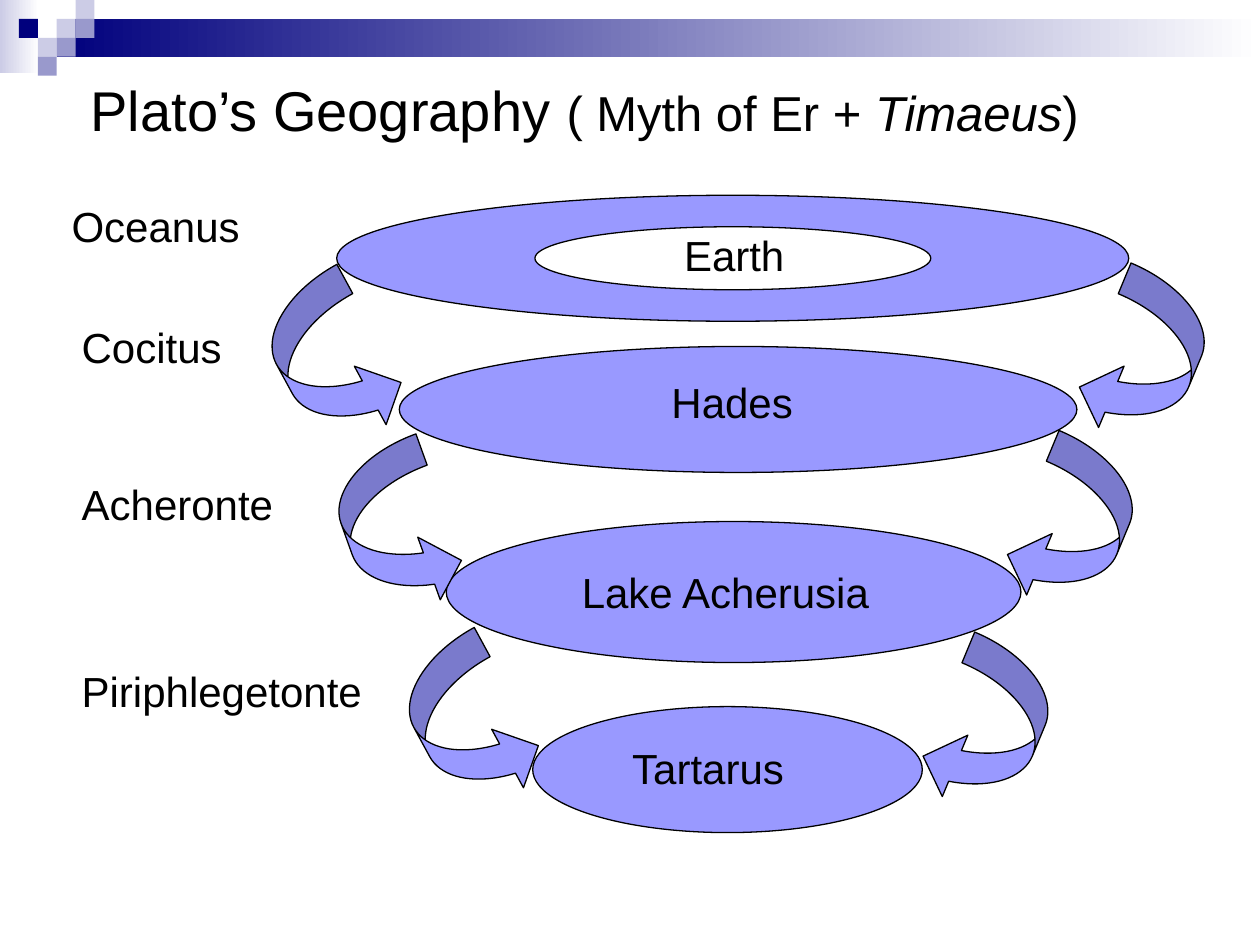
from dataclasses import dataclass

from pptx import Presentation
from pptx.dml.color import RGBColor
from pptx.enum.shapes import MSO_SHAPE as Preset
from pptx.enum.text import MSO_ANCHOR as Anchor, PP_ALIGN as Align
from pptx.util import Pt

COLORS = {
    "navy": "00007D",
    "mist": "CCCCE6",
    "lavender": "9999CC",
    "water": "9999FF",
    "land": "FFFFFF",
    "ink": "000000",
}
FONT = "Arial"
TILE = 10.8
LABEL_HEIGHT = 36
ARROW_WIDTH, ARROW_HEIGHT = 57.6, 95.8
ARROW_ADJUSTMENTS = (0.33, 0.66, 0.33)


@dataclass(frozen=True)
class Box:
    left: float
    top: float
    width: float
    height: float

    def lengths(self):
        return tuple(Pt(v) for v in (self.left, self.top, self.width, self.height))


@dataclass(frozen=True)
class Region:
    box: Box
    color: str = "water"


@dataclass(frozen=True)
class Label:
    text: str
    left: float
    top: float
    width: float


@dataclass(frozen=True)
class Stream:
    left: float
    top: float
    rotation: float
    preset: Preset


@dataclass(frozen=True)
class Tile:
    column: int
    row: int
    color: str


BANDS = (
    (Box(0, 0, 22.3, 41.8), "mist"),
    (Box(32.4, TILE, 687.6, 21.6), "navy"),
)
TILES = (
    Tile(3, 1, "mist"),
    Tile(4, 0, "mist"),
    Tile(4, 1, "lavender"),
    Tile(2, 2, "mist"),
    Tile(1, 1, "navy"),
    Tile(3, 2, "lavender"),
    Tile(2, 3, "lavender"),
)
REGIONS = (
    Region(Box(192.4, 111.6, 452.6, 72)),
    Region(Box(305.7, 129.6, 226.2, 36), "land"),
    Region(Box(228.2, 198, 387.2, 72)),
    Region(Box(255, 298, 328.4, 80.6)),
    Region(Box(304.4, 403.8, 222.6, 72)),
)
STREAMS = (
    Stream(161.3, 159, 331.5, Preset.CURVED_RIGHT_ARROW),
    Stream(198, 254.9, 340.2, Preset.CURVED_RIGHT_ARROW),
    Stream(239.8, 366.5, 331.5, Preset.CURVED_RIGHT_ARROW),
    Stream(625.7, 157.7, 22.6, Preset.CURVED_LEFT_ARROW),
    Stream(584.6, 253.4, 22.6, Preset.CURVED_LEFT_ARROW),
    Stream(536.4, 368.6, 22.6, Preset.CURVED_LEFT_ARROW),
)
LABELS = (
    Label("Earth", 383.8, 127.4, 72),
    Label("Hades", 376.6, 211.7, 84.2),
    Label("Lake Acherusia", 325.4, 320.4, 182.9),
    Label("Tartarus", 354.2, 420.5, 110.9),
    Label("Oceanus", 33.8, 110.9, 135.4),
    Label("Cocitus", 39.6, 180, 177.8),
    Label("Acheronte", 39.6, 270, 200.9),
    Label("Piriphlegetonte", 39.6, 376.6, 208),
)
TITLE_RUNS = (
    ("Plato’s Geography ", 32, False),
    ("( Myth of Er + ", 28, False),
    ("Timaeus", 28, True),
    (")", 28, False),
)


def rgb(name: str) -> RGBColor:
    return RGBColor.from_string(COLORS[name])


def style_run(run, size: float, italic: bool = False) -> None:
    run.font.name = FONT
    run.font.size = Pt(size)
    run.font.italic = italic
    run.font.color.rgb = rgb("ink")


def add_preset(slide, preset: Preset, box: Box, color: str, outlined: bool = True):
    shape = slide.shapes.add_shape(preset, *box.lengths())
    shape.shadow.inherit = False
    shape.fill.solid()
    shape.fill.fore_color.rgb = rgb(color)
    if outlined:
        shape.line.color.rgb = rgb("ink")
        shape.line.width = Pt(0.75)
    else:
        shape.line.fill.background()
    return shape


def add_band(slide, box: Box, color: str) -> None:
    band = add_preset(slide, Preset.RECTANGLE, box, color, outlined=False)
    band.fill.gradient()
    band.fill.gradient_angle = 0
    for stop, position, name in zip(band.fill.gradient_stops, (0, 1), (color, "land")):
        stop.position = position
        stop.color.rgb = rgb(name)


def add_tile(slide, tile: Tile) -> None:
    box = Box(tile.column * TILE, tile.row * TILE, TILE, TILE)
    add_preset(slide, Preset.RECTANGLE, box, tile.color, outlined=False)


def add_stream(slide, stream: Stream) -> None:
    box = Box(stream.left, stream.top, ARROW_WIDTH, ARROW_HEIGHT)
    arrow = add_preset(slide, stream.preset, box, "water")
    arrow.rotation = stream.rotation
    for index, value in enumerate(ARROW_ADJUSTMENTS):
        arrow.adjustments[index] = value


def add_label(slide, label: Label) -> None:
    box = Box(label.left, label.top, label.width, LABEL_HEIGHT)
    frame = slide.shapes.add_textbox(*box.lengths()).text_frame
    frame.word_wrap = True
    frame.text = label.text
    style_run(frame.paragraphs[0].runs[0], 24)


def set_title(slide) -> None:
    title = slide.shapes.title
    title.left, title.top, title.width, title.height = Box(44.6, 39.6, 635.8, 46).lengths()
    title.text_frame.vertical_anchor = Anchor.TOP
    heading = title.text_frame.paragraphs[0]
    heading.alignment = Align.LEFT
    for text, size, italic in TITLE_RUNS:
        run = heading.add_run()
        run.text = text
        style_run(run, size, italic)


def main() -> None:
    deck = Presentation()
    deck.slide_width, deck.slide_height = Pt(720), Pt(540)
    slide = deck.slides.add_slide(deck.slide_layouts[5])
    set_title(slide)
    for box, color in BANDS:
        add_band(slide, box, color)
    for tile in TILES:
        add_tile(slide, tile)
    for region in REGIONS:
        add_preset(slide, Preset.OVAL, region.box, region.color)
    for stream in STREAMS:
        add_stream(slide, stream)
    for label in LABELS:
        add_label(slide, label)
    deck.save("out.pptx")


if __name__ == "__main__":
    main()
